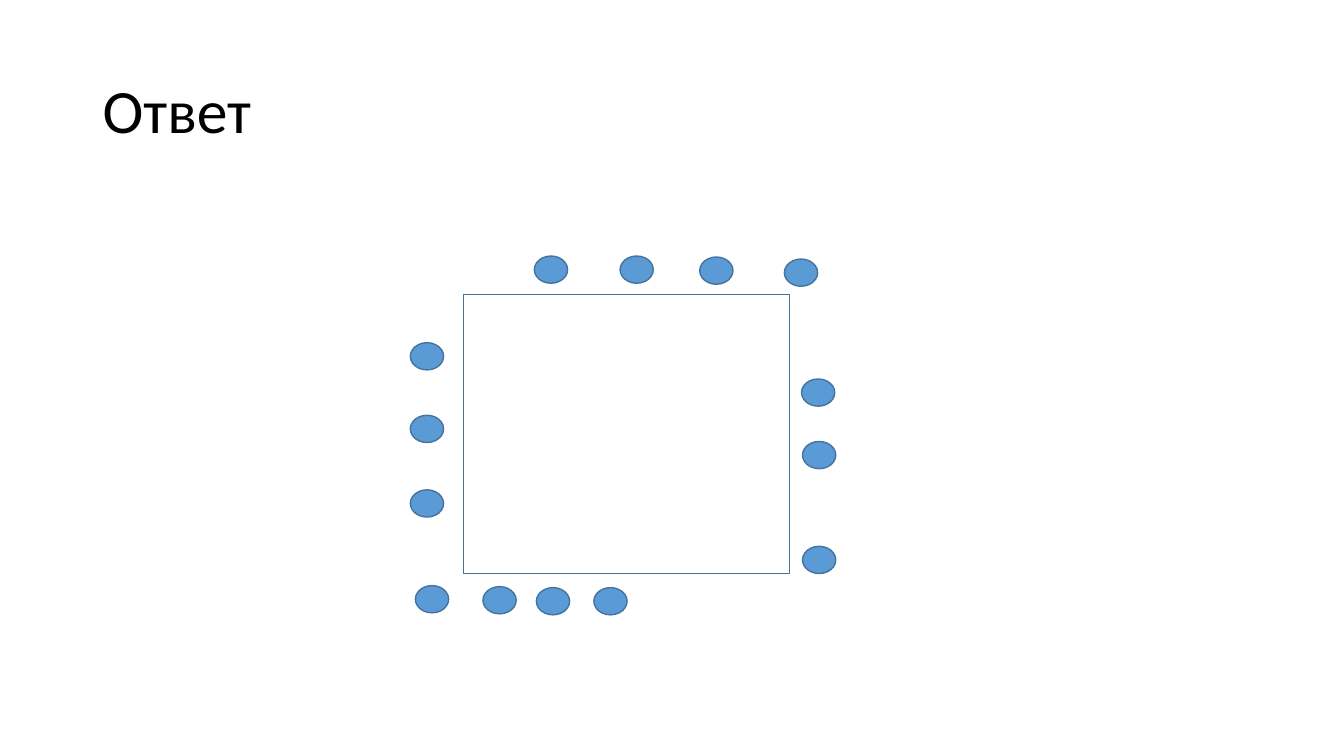
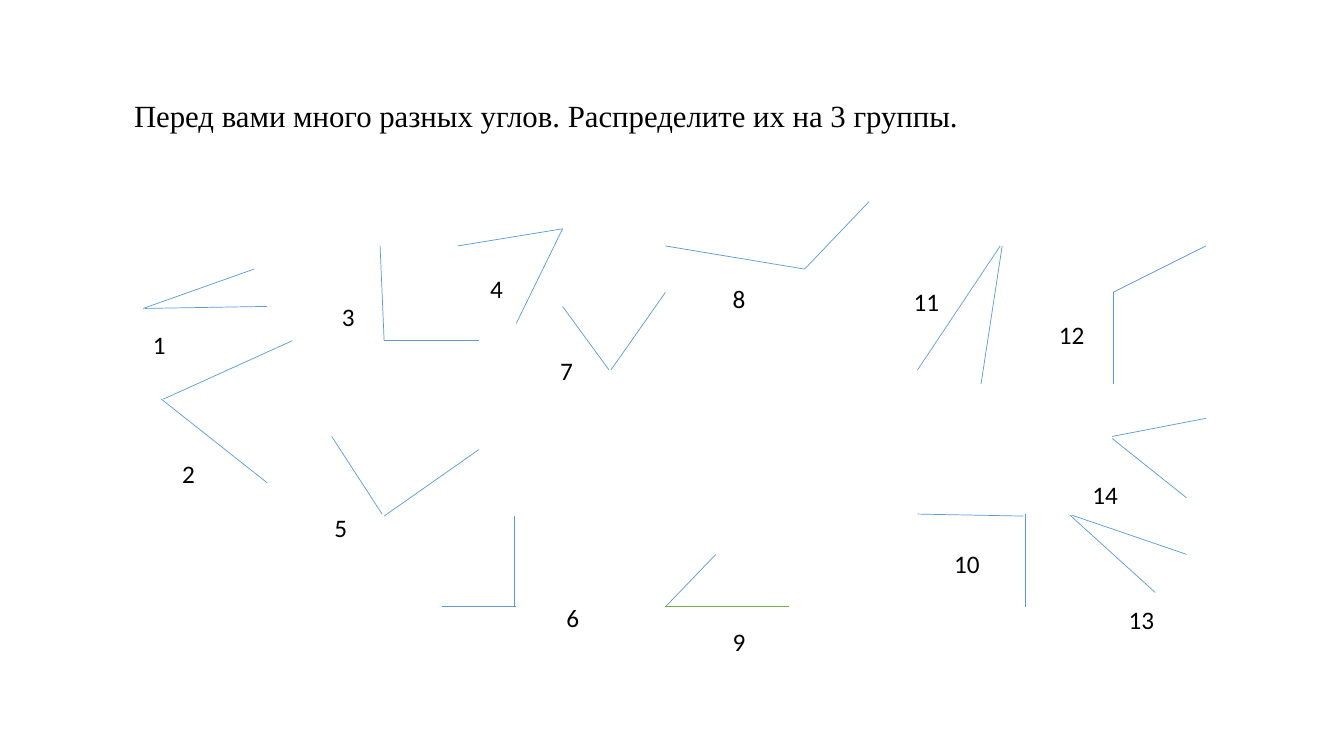
from typing import Any, NamedTuple

from lxml.etree import SubElement
from pptx import Presentation as Deck
from pptx.dml.color import RGBColor as Rgb
from pptx.enum.shapes import MSO_CONNECTOR as Conn, MSO_SHAPE as Kind
from pptx.enum.text import MSO_ANCHOR as Anchor, PP_ALIGN as Align
from pptx.oxml.ns import qn
from pptx.util import Inches, Pt

BLUE, EDGE, GREEN = "5B9BD5", "43739E", "70AD47"
BLACK, WHITE = "000000", "FFFFFF"
SEAT_W, SEAT_H = 0.33, 0.27


class Box(NamedTuple):
    left: float
    top: float
    width: float
    height: float


class Ray(NamedTuple):
    x1: float
    y1: float
    x2: float
    y2: float
    hue: str = BLUE


class Angle(NamedTuple):
    label: str
    box: Box
    rays: tuple[Ray, Ray]


TITLE = Box(0.92, 0.4, 11.5, 1.45)
TABLE = Box(4.6, 2.92, 3.23, 2.77)
SEATS = {
    "top": ((5.3, 2.54), (6.15, 2.54), (6.94, 2.55), (7.78, 2.57)),
    "left": ((4.07, 3.4), (4.07, 4.12), (4.07, 4.86)),
    "right": ((7.95, 3.76), (7.96, 4.38), (7.96, 5.42)),
    "bottom": ((4.12, 5.81), (4.79, 5.82), (5.32, 5.83), (5.89, 5.83)),
}
ANGLES = (
    Angle("1", Box(1.33, 3.17, 0.5, 0.5),
          (Ray(1.42, 3.06, 2.52, 2.67), Ray(1.44, 3.06, 2.65, 3.04))),
    Angle("2", Box(1.6, 4.46, 0.54, 0.48),
          (Ray(1.6, 3.96, 2.65, 4.79), Ray(1.62, 3.96, 2.9, 3.38))),
    Angle("3", Box(3.29, 2.9, 0.33, 0.48),
          (Ray(3.77, 2.44, 3.81, 3.38), Ray(3.81, 3.38, 4.75, 3.38))),
    Angle("4", Box(4.75, 2.67, 0.35, 0.38),
          (Ray(4.54, 2.44, 5.58, 2.27), Ray(5.58, 2.27, 5.12, 3.21))),
    Angle("5", Box(3.14, 4.95, 0.48, 0.56),
          (Ray(3.81, 5.12, 4.75, 4.46), Ray(3.79, 5.1, 3.29, 4.33))),
    Angle("6", Box(5.41, 5.88, 0.54, 0.5),
          (Ray(4.38, 6.02, 5.12, 6.02), Ray(5.1, 6.02, 5.1, 5.12))),
    Angle("7", Box(5.42, 3.38, 0.4, 0.6),
          (Ray(5.58, 3.04, 6.04, 3.67), Ray(6.06, 3.67, 6.6, 2.9))),
    Angle("8", Box(7.12, 2.71, 0.42, 0.5),
          (Ray(7.98, 2.67, 6.6, 2.44), Ray(7.98, 2.67, 8.62, 2))),
    Angle("9", Box(7.03, 6.17, 0.6, 0.38),
          (Ray(7.1, 5.5, 6.6, 6.02), Ray(6.6, 6.02, 7.83, 6.02, GREEN))),
    Angle("10", Box(9.33, 5.29, 0.52, 0.59),
          (Ray(9.1, 5.1, 10.15, 5.12), Ray(10.17, 5.1, 10.17, 6.02))),
    Angle("11", Box(8.96, 2.79, 0.46, 0.39),
          (Ray(9.1, 3.67, 9.92, 2.44), Ray(9.94, 2.44, 9.73, 3.81))),
    Angle("12", Box(10.4, 3.04, 0.46, 0.56),
          (Ray(11.04, 2.9, 11.04, 3.81), Ray(11.04, 2.9, 11.96, 2.44))),
    Angle("13", Box(11.04, 5.88, 0.56, 0.54),
          (Ray(10.6, 5.1, 11.46, 5.88), Ray(10.6, 5.1, 11.77, 5.5))),
    Angle("14", Box(10.6, 4.71, 0.72, 0.4),
          (Ray(11.03, 4.33, 11.96, 4.15), Ray(11.03, 4.35, 11.77, 4.94))),
)

FRAME = {"word_wrap": True, "vertical_anchor": Anchor.MIDDLE,
         "margin_top": 0, "margin_bottom": 0}
HEAD = {"name": "Calibri", "size": Pt(44)}
TASK = {"name": "Times New Roman", "size": Pt(22)}
MARK = {"name": "Calibri", "size": Pt(18)}


def apply(item: Any, values: dict[str, Any]) -> None:
    for name, value in values.items():
        setattr(item, name, value)


def color(code: str) -> Rgb:
    return Rgb.from_string(code)


def place(box: Box) -> list[int]:
    return [Inches(part) for part in box]


def write(shape: Any, text: str, font: dict[str, Any], para: dict[str, Any],
          inset: float = 0) -> None:
    frame = shape.text_frame
    apply(frame, FRAME | {"margin_left": Inches(inset), "margin_right": 0})
    line = frame.paragraphs[0]
    apply(line, para)
    run = line.add_run()
    run.text = text
    apply(run.font, font)
    run.font.color.rgb = color(BLACK)


def add_title(slide: Any, text: str, font: dict[str, Any], space: float,
              inset: float) -> None:
    shape = slide.shapes.add_textbox(*place(TITLE))
    write(shape, text, font, {"line_spacing": space, "alignment": Align.LEFT}, inset)


def add_form(slide: Any, kind: Kind, box: Box, fill: str = "", edge: str = "") -> Any:
    shape = slide.shapes.add_shape(kind, *place(box))
    shape.shadow.inherit = False
    if fill:
        shape.fill.solid()
        shape.fill.fore_color.rgb = color(fill)
    else:
        shape.fill.background()
    if edge:
        shape.line.color.rgb = color(edge)
        shape.line.width = Pt(1)
    else:
        shape.line.fill.background()
    return shape


def add_ray(slide: Any, ray: Ray) -> None:
    ends = [Inches(part) for part in ray[:4]]
    line = slide.shapes.add_connector(Conn.STRAIGHT, *ends)
    line.line.color.rgb = color(ray.hue)
    line.line.width = Pt(0.5)
    SubElement(line._element.spPr, qn("a:effectLst"))


def draw_seats(slide: Any) -> None:
    add_title(slide, "Ответ", HEAD, 0.9, 0.1)
    add_form(slide, Kind.RECTANGLE, TABLE, edge=EDGE)
    for side in SEATS.values():
        for left, top in side:
            add_form(slide, Kind.OVAL, Box(left, top, SEAT_W, SEAT_H), BLUE, EDGE)


def draw_angles(slide: Any) -> None:
    add_title(slide, "Перед вами много разных углов. Распределите их на 3 группы.",
              TASK, 1.07, 0.41)
    for angle in ANGLES:
        for ray in angle.rays:
            add_ray(slide, ray)
    for angle in ANGLES:
        shape = add_form(slide, Kind.RECTANGLE, angle.box, WHITE)
        write(shape, angle.label, MARK, {"alignment": Align.CENTER})


def main() -> None:
    deck = Deck()
    apply(deck, {"slide_width": Inches(13.33), "slide_height": Inches(7.5)})
    for draw in (draw_seats, draw_angles):
        draw(deck.slides.add_slide(deck.slide_layouts[6]))
    deck.save("out.pptx")


if __name__ == "__main__":
    main()
